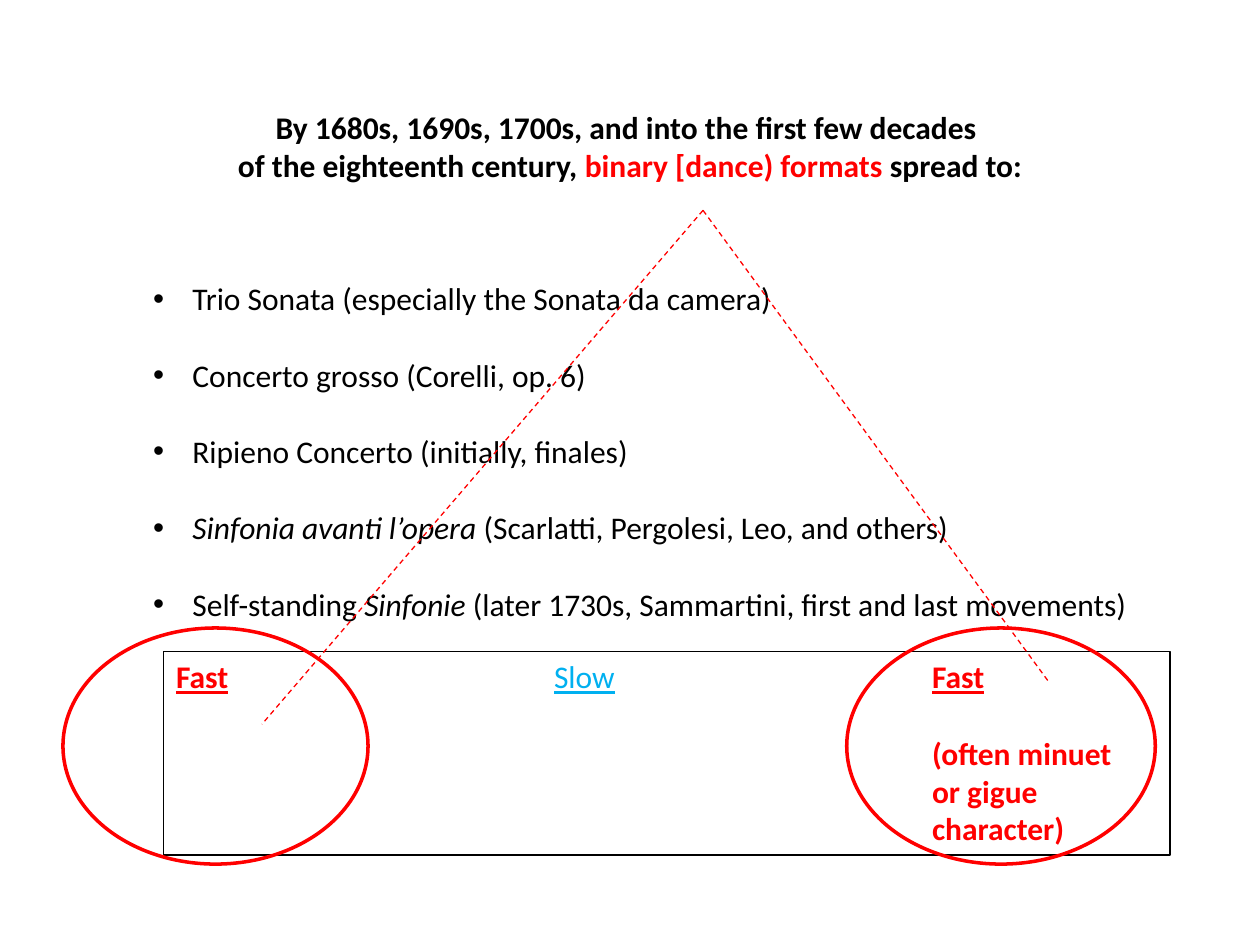
import pptx
import pptx.util
import pptx.dml.color
import pptx.enum.dml
import pptx.enum.shapes
import pptx.enum.text
import pptx.oxml.ns
import lxml.etree

Cm = pptx.util.Cm
Pt = pptx.util.Pt
BLACK, RED, BLUE = "000000", "FF0000", "00B0F0"
TAB_WIDTH = 7.62
LINE_HEIGHT = 22


def color(hex_string):
    return pptx.dml.color.RGBColor.from_string(hex_string)


def add_element(parent, tag, **attributes):
    return lxml.etree.SubElement(parent, pptx.oxml.ns.qn(tag), attributes)


def add_run(paragraph, text, hex_string=BLACK, bold=False, italic=False, underline=False):
    run = paragraph.add_run()
    run.text = text
    font = run.font
    font.name, font.size = "Calibri", Pt(18)
    font.bold, font.italic, font.underline = bold, italic, underline
    font.color.rgb = color(hex_string)


def next_paragraph(frame, index):
    return frame.paragraphs[0] if index == 0 else frame.add_paragraph()


def add_text_box(slide, left, top, width, height):
    frame = slide.shapes.add_textbox(Cm(left), Cm(top), Cm(width), Cm(height)).text_frame
    frame.word_wrap = True
    return frame


def add_outline(slide, preset, left, top, width, height, hex_string, weight):
    shape = slide.shapes.add_shape(preset, Cm(left), Cm(top), Cm(width), Cm(height))
    shape.shadow.inherit = False
    shape.fill.background()
    shape.line.color.rgb = color(hex_string)
    shape.line.width = Pt(weight)
    return shape


def add_heading(slide, left, top, width, height):
    frame = add_text_box(slide, left, top, width, height)
    lines = [
        [("By 1680s, 1690s, 1700s, and into the first few decades ", BLACK)],
        [("of the eighteenth century, ", BLACK), ("binary [dance) formats ", RED),
         ("spread to:", BLACK)],
    ]
    for index, runs in enumerate(lines):
        paragraph = next_paragraph(frame, index)
        paragraph.alignment = pptx.enum.text.PP_ALIGN.CENTER
        for text, hex_string in runs:
            add_run(paragraph, text, hex_string, bold=True)


def add_genres(slide, left, top, width, height):
    frame = add_text_box(slide, left, top, width, height)
    # Each genre is a list of (text, italic) runs
    genres = [
        [("Trio Sonata (especially the Sonata da camera)", False)],
        [("Concerto grosso (Corelli, op. 6)", False)],
        [("Ripieno Concerto (initially, finales)", False)],
        [("Sinfonia avanti l’opera ", True), ("(Scarlatti, Pergolesi, Leo, and others)", False)],
        [("Self-standing ", False), ("Sinfonie", True),
         (" (later 1730s, Sammartini, first and last movements)", False)],
    ]
    for index, runs in enumerate(genres):
        paragraph = next_paragraph(frame, index)
        if index:
            paragraph.space_before = Pt(LINE_HEIGHT)
        properties = paragraph._p.get_or_add_pPr()
        properties.set("marL", str(Cm(0.79)))
        properties.set("indent", str(-Cm(0.79)))
        add_element(properties, "a:buFont", typeface="Arial")
        add_element(properties, "a:buChar", char="•")
        for text, italic in runs:
            add_run(paragraph, text, italic=italic)


def add_movements(slide, left, top, width, height):
    shapes = pptx.enum.shapes.MSO_SHAPE
    frame = add_outline(slide, shapes.RECTANGLE, left, top, width, height, BLACK, 0.75).text_frame
    frame.word_wrap = True
    frame.vertical_anchor = pptx.enum.text.MSO_ANCHOR.TOP

    # Three movements on evenly spaced tab stops
    tempos = frame.paragraphs[0]
    tempos.alignment = pptx.enum.text.PP_ALIGN.LEFT
    tab_list = add_element(tempos._p.get_or_add_pPr(), "a:tabLst")
    for column in (1, 2):
        add_element(tab_list, "a:tab", pos=str(Cm(column * TAB_WIDTH)), algn="l")
    add_run(tempos, "Fast", RED, bold=True, underline=True)
    add_run(tempos, "\t")
    add_run(tempos, "Slow", BLUE, underline=True)
    add_run(tempos, "\t")
    add_run(tempos, "Fast", RED, bold=True, underline=True)

    # Remark under the last movement
    for index, text in enumerate(["(often minuet", "or gigue", "character)"]):
        paragraph = frame.add_paragraph()
        paragraph.alignment = pptx.enum.text.PP_ALIGN.LEFT
        paragraph._p.get_or_add_pPr().set("marL", str(Cm(2 * TAB_WIDTH)))
        if index == 0:
            paragraph.space_before = Pt(LINE_HEIGHT)
        add_run(paragraph, text, RED, bold=True)

    # Rings around the two fast movements
    for offset, ring_width in ((-2.03, 6.15), (13.77, 6.22)):
        add_outline(slide, shapes.OVAL, left + offset, top - 0.47, ring_width, 4.76, RED, 2)


def add_links(slide, left, top, width, height):
    apex = left + 0.56 * width
    for end_x, end_y in ((left, top + height), (left + width, top + 0.92 * height)):
        connector = slide.shapes.add_connector(
            pptx.enum.shapes.MSO_CONNECTOR.STRAIGHT, Cm(apex), Cm(top), Cm(end_x), Cm(end_y))
        connector.line.color.rgb = color(RED)
        connector.line.width = Pt(0.75)
        connector.line.dash_style = pptx.enum.dml.MSO_LINE.DASH
        add_element(connector._element.spPr, "a:effectLst")


def main():
    presentation = pptx.Presentation()
    presentation.slide_width, presentation.slide_height = Cm(25.4), Cm(19.05)
    slide = presentation.slides.add_slide(presentation.slide_layouts[6])
    add_genres(slide, 2.84, 5.51, 20.75, 7.19)
    add_movements(slide, 3.3, 13.13, 20.29, 4.11)
    add_links(slide, 5.28, 4.24, 15.88, 10.36)
    add_heading(slide, 2.92, 2.06, 19.56, 1.8)
    presentation.save("out.pptx")


if __name__ == "__main__":
    main()
